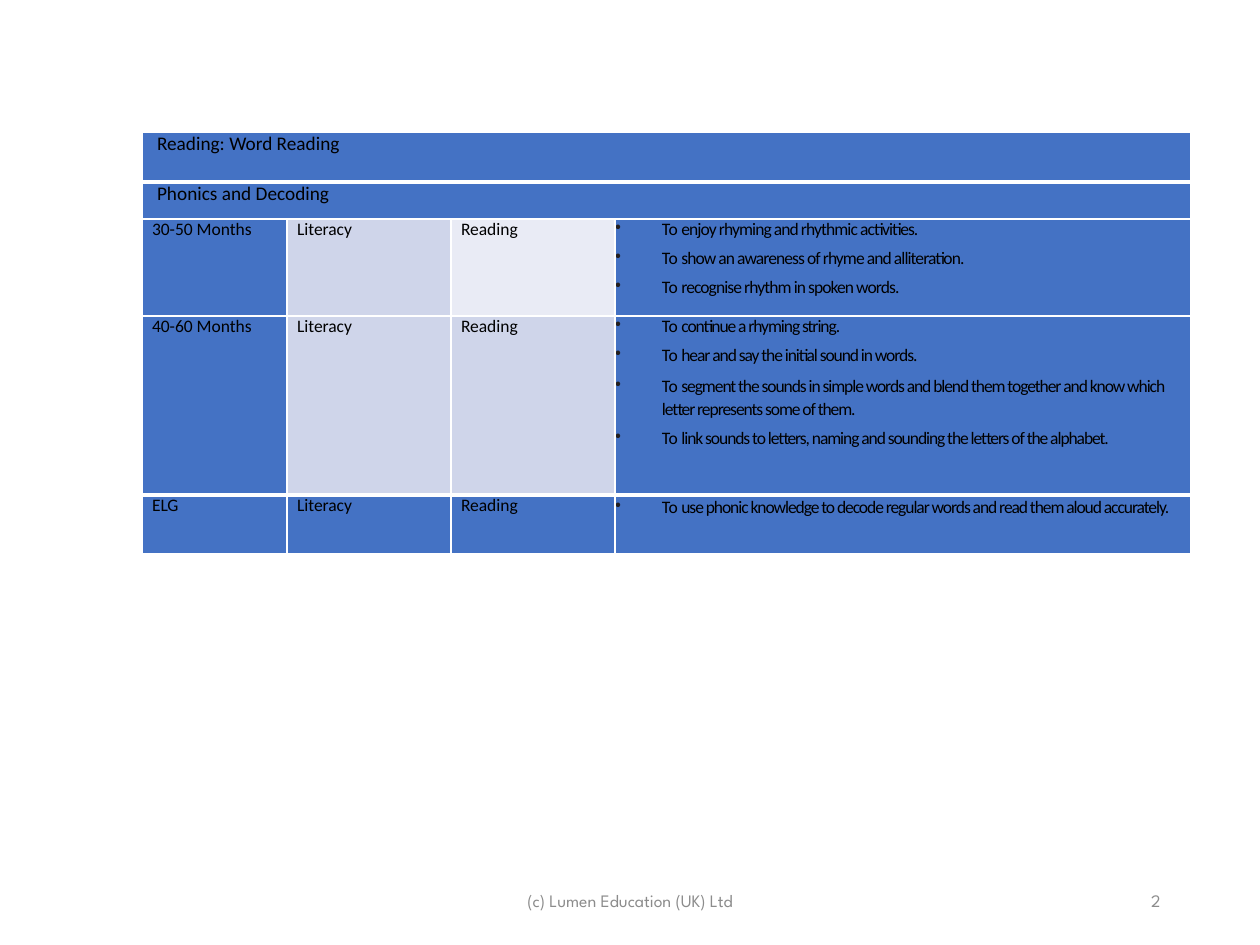
from dataclasses import dataclass
from lxml import etree
from pptx import Presentation
from pptx.dml.color import RGBColor
from pptx.enum.text import MSO_ANCHOR, PP_ALIGN
from pptx.oxml.ns import qn
from pptx.util import Pt

PX = 914400 / 126
MID = MSO_ANCHOR.MIDDLE
LEFT, CENTER, RIGHT = PP_ALIGN.LEFT, PP_ALIGN.CENTER, PP_ALIGN.RIGHT


@dataclass(frozen=True)
class Theme:
    blue: str = "4472C4"
    band: str = "CFD5EA"
    pale: str = "E9EBF5"
    white: str = "FFFFFF"
    ink: str = "000000"
    dot: str = "231F20"
    gray: str = "8C8C8C"
    body: str = "Calibri"
    foot: str = "League Spartan"
    head: int = 11
    small: int = 10


T = Theme()
COLS = [145, 164, 164, 576]
ROWS = [50, 37, 97, 179, 59]
HEADS = [("Reading: Word Reading", 6.7), ("Phonics and Decoding", 2.9)]
STAGES = [
    ("30-50 Months", (T.band, T.pale), -0.5, [
        ("enjoy rhyming and rhythmic activities.", 3.1, None),
        ("show an awareness of rhyme and alliteration.", 4.3, None),
        ("recognise rhythm in spoken words.", 4.3, None),
    ]),
    ("40-60 Months", (T.band, T.band), -0.6, [
        ("continue a rhyming string.", 3.1, None),
        ("hear and say the initial sound in words.", 4.3, None),
        ("segment the sounds in simple words and blend them together "
         "and know which letter represents some of them.", 4.3, 1.11),
        ("link sounds to letters, naming and sounding the letters "
         "of the alphabet.", 3, 1.11),
    ]),
    ("ELG", (T.blue, T.blue), -0.6, [
        ("use phonic knowledge to decode regular words and read them "
         "aloud accurately.", 3.1, 1.11),
    ]),
]


def px(n):
    return round(n * PX)


def write(para, text, size=T.small, font=T.body, color=T.ink, align=LEFT,
          space=0, before=0, line=None, indent=0, hang=0):
    para.alignment = align
    para.space_before = Pt(before)
    if line:
        para.line_spacing = line
    props = para._p.get_or_add_pPr()
    props.set("marL", str(px(indent)))
    props.set("indent", str(px(-hang)))
    run = para.add_run()
    run.text = text
    run.font.size = Pt(size)
    run.font.name = font
    run.font.color.rgb = RGBColor.from_string(color)
    if space:
        run._r.get_or_add_rPr().set("spc", str(round(space * 100)))


def bullet(para):
    props = para._p.get_or_add_pPr()
    tint = etree.SubElement(props, qn("a:buClr"))
    etree.SubElement(tint, qn("a:srgbClr"), val=T.dot)
    etree.SubElement(props, qn("a:buChar"), char="•")


def label(slide, text, x, y, w, h, align):
    frame = slide.shapes.add_textbox(px(x), px(y), px(w), px(h)).text_frame
    frame.word_wrap = True
    frame.vertical_anchor = MID
    write(frame.paragraphs[0], text, font=T.foot, color=T.gray, align=align)


def dress(cell, fill, top=1, bottom=1):
    cell.margin_left = cell.margin_right = 0
    cell.margin_top = cell.margin_bottom = 0
    cell.fill.solid()
    cell.fill.fore_color.rgb = RGBColor.from_string(fill)
    sides = [("lnL", 1), ("lnR", 1), ("lnT", top), ("lnB", bottom)]
    props = cell._tc.get_or_add_tcPr()
    for i, (side, width) in enumerate(sides):
        edge = etree.Element(qn("a:" + side), w=str(Pt(width)))
        solid = etree.SubElement(edge, qn("a:solidFill"))
        etree.SubElement(solid, qn("a:srgbClr"), val=T.white)
        props.insert(i, edge)


def goals(cell, items, space):
    frame = cell.text_frame
    for i, (text, before, line) in enumerate(items):
        para = frame.add_paragraph() if i else frame.paragraphs[0]
        write(para, "To ", space=-0.2, before=before, line=line,
              indent=47, hang=47)
        bullet(para)
        write(para, text, space=space, before=before, line=line,
              indent=47, hang=47)


def grid(slide, x, y):
    frame = slide.shapes.add_table(len(ROWS), len(COLS), px(x), px(y),
                                   px(sum(COLS)), px(sum(ROWS)))
    table = frame.table
    table.first_row = table.horz_banding = False
    for col, w in zip(table.columns, COLS):
        col.width = px(w)
    for row, h in zip(table.rows, ROWS):
        row.height = px(h)

    fills = [[T.blue] * 4 for _ in HEADS]
    fills += [[T.blue, *pair, T.blue] for _, pair, _, _ in STAGES]
    thick = {1, len(ROWS) - 1}
    for r, tints in enumerate(fills):
        top = 3 if r in thick else 1
        bottom = 3 if r + 1 in thick else 1
        for c, tint in enumerate(tints):
            dress(table.cell(r, c), tint, top, bottom)

    for r, (text, before) in enumerate(HEADS):
        cell = table.cell(r, 0)
        cell.merge(table.cell(r, len(COLS) - 1))
        write(cell.text_frame.paragraphs[0], text, size=T.head,
              before=before, indent=15)
    for r, (age, _, space, items) in enumerate(STAGES, len(HEADS)):
        for c, text in enumerate((age, "Literacy", "Reading")):
            write(table.cell(r, c).text_frame.paragraphs[0], text,
                  before=3.1, indent=10)
        goals(table.cell(r, 3), items, space)


def main():
    deck = Presentation()
    deck.slide_width, deck.slide_height = px(1260), px(945)
    slide = deck.slides.add_slide(deck.slide_layouts[6])
    label(slide, "(c) Lumen Education (UK) Ltd", 417, 876, 426, 50, CENTER)
    label(slide, "2", 890, 876, 283, 50, RIGHT)
    grid(slide, 142, 132)
    deck.save("out.pptx")


if __name__ == "__main__":
    main()
